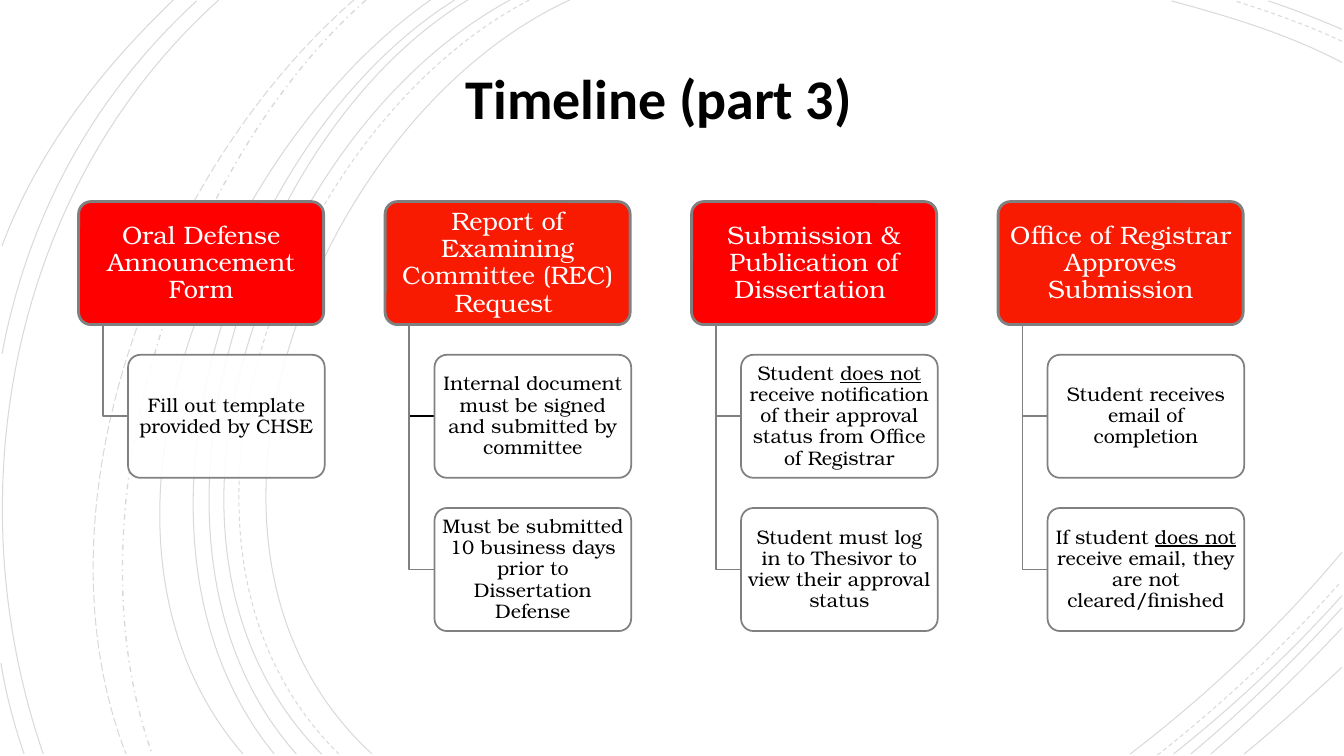
"""Build the third timeline slide: four dissertation steps with their details."""
from dataclasses import dataclass
from typing import NamedTuple

from lxml.etree import SubElement
from pptx import Presentation
from pptx.dml.color import RGBColor
from pptx.dml.line import LineFormat
from pptx.enum.dml import MSO_LINE_DASH_STYLE as Dash
from pptx.enum.shapes import MSO_SHAPE as Preset
from pptx.enum.text import MSO_ANCHOR as Anchor, MSO_AUTO_SIZE as AutoSize, PP_ALIGN as Align
from pptx.oxml.ns import qn
from pptx.shapes.autoshape import Shape
from pptx.slide import Slide
from pptx.util import Pt

PX = 9144
COLORS = {
    "ink": "000000",
    "paper": "FFFFFF",
    "outline": "808080",
    "red": "FF0000",
    "scarlet": "F81B02",
}
BODY_FONT = "TeX Gyre Bonum"
TITLE_FONT = "Calibri"

COLUMN_LEFT, COLUMN_PITCH = 78, 304
HEADER_TOP, HEADER_WIDTH, BOX_HEIGHT = 200, 243, 122
DETAIL_INDENT, DETAIL_WIDTH, ROW_PITCH = 49, 195, 152
STEM_INDENT = 24

Point = tuple[int, int]


class Words(NamedTuple):
    text: str
    underline: bool = False


@dataclass(frozen=True)
class Arc:
    start: Point
    control_1: Point
    control_2: Point
    end: Point
    dash: Dash = Dash.SOLID
    width: float = 0.75


@dataclass(frozen=True)
class Detail:
    words: tuple[Words, ...]
    stem_color: str = "outline"


@dataclass(frozen=True)
class Step:
    heading: str
    fill: str
    details: tuple[Detail, ...]


@dataclass(frozen=True)
class BoxStyle:
    fill: str
    text: str
    size: int
    line_width: float
    margin_x: int
    margin_y: int
    opacity: int = 100


ARCS = (
    Arc((565, 0), (315, 115), (143, 540), (369, 748)),
    Arc((1331, 62), (1278, 34), (1218, 16), (1162, 1)),
    Arc((1121, 748), (1197, 690), (1269, 622), (1331, 548)),
    Arc((525, 0), (285, 125), (123, 537), (336, 748), Dash.DASH),
    Arc((1331, 41), (1297, 25), (1260, 12), (1225, 1), Dash.DASH),
    Arc((1148, 749), (1213, 698), (1275, 640), (1330, 577), Dash.DASH),
    Arc((506, 0), (270, 127), (110, 537), (319, 748)),
    Arc((1331, 29), (1307, 19), (1283, 9), (1258, 1)),
    Arc((1164, 748), (1223, 701), (1280, 648), (1331, 591)),
    Arc((464, 0), (244, 133), (110, 541), (294, 748)),
    Arc((1181, 748), (1234, 704), (1284, 655), (1331, 603)),
    Arc((451, 0), (231, 138), (97, 533), (272, 748)),
    Arc((1201, 748), (1246, 709), (1290, 667), (1331, 623)),
    Arc((427, 0), (217, 147), (53, 529), (241, 748)),
    Arc((1234, 748), (1267, 721), (1299, 692), (1331, 662)),
    Arc((363, 0), (176, 166), (65, 509), (151, 748), Dash.DASH_DOT, 1),
    Arc((351, 0), (157, 169), (29, 499), (125, 748), Dash.LONG_DASH),
    Arc((217, 0), (11, 185), (-46, 490), (43, 748)),
    Arc((195, 1), (92, 96), (28, 214), (2, 351)),
    Arc((1, 658), (6, 689), (14, 719), (24, 748)),
    Arc((172, 0), (100, 69), (37, 150), (2, 244)),
)

STEPS = (
    Step("Oral Defense Announcement Form", "red", (
        Detail((Words("Fill out template provided by CHSE"),)),
    )),
    Step("Report of Examining Committee (REC) Request ", "scarlet", (
        Detail((Words("Internal document must be signed and submitted by committee"),), "ink"),
        Detail((Words("Must be submitted 10 business days prior to Dissertation Defense"),)),
    )),
    Step("Submission & Publication of Dissertation ", "red", (
        Detail((
            Words("Student "),
            Words("does not ", True),
            Words("receive notification of their approval status from Office of Registrar"),
        )),
        Detail((Words("Student must log in to Thesivor to view their approval status"),)),
    )),
    Step("Office of Registrar Approves Submission", "scarlet", (
        Detail((Words("Student receives email of completion"),)),
        Detail((
            Words("If student "),
            Words("does not ", True),
            Words("receive email, they are not cleared/finished"),
        )),
    )),
)

DETAIL_STYLE = BoxStyle("paper", "ink", 14, 1.25, 3, 2, 90)


def rgb(name: str) -> RGBColor:
    return RGBColor.from_string(COLORS[name])


def set_opacity(properties, percent: int) -> None:
    color = properties.find(f"{qn('a:solidFill')}/{qn('a:srgbClr')}")
    SubElement(color, qn("a:alpha"), val=str(percent * 1000))


def set_line(line: LineFormat, color: str, width: float) -> None:
    line.color.rgb = rgb(color)
    line.width = Pt(width)


def add_outline(slide: Slide, points: list[Point], color: str, width: float) -> Shape:
    builder = slide.shapes.build_freeform(*points[0], scale=PX)
    builder.add_line_segments(points[1:], close=False)
    shape = builder.convert_to_shape()
    shape.shadow.inherit = False
    shape.fill.background()
    set_line(shape.line, color, width)
    return shape


def add_arc(slide: Slide, arc: Arc) -> None:
    points = [arc.start, arc.control_1, arc.control_2, arc.end]
    shape = add_outline(slide, points, "ink", arc.width)
    shape.line.dash_style = arc.dash
    set_opacity(shape.line._ln, 15)
    outline = next(shape._element.iter(qn("a:path")))
    curve = SubElement(outline, qn("a:cubicBezTo"))
    for segment in outline.findall(qn("a:lnTo")):
        curve.append(segment[0])
        outline.remove(segment)


def add_box(slide: Slide, left: int, top: int, width: int,
            words: tuple[Words, ...], style: BoxStyle) -> None:
    shape = slide.shapes.add_shape(
        Preset.ROUNDED_RECTANGLE, left * PX, top * PX, width * PX, BOX_HEIGHT * PX)
    shape.adjustments[0] = 0.1
    shape.shadow.inherit = False
    shape.fill.solid()
    shape.fill.fore_color.rgb = rgb(style.fill)
    if style.opacity < 100:
        set_opacity(shape._element.spPr, style.opacity)
    set_line(shape.line, "outline", style.line_width)
    frame = shape.text_frame
    frame.word_wrap = True
    frame.vertical_anchor = Anchor.MIDDLE
    frame.margin_left = frame.margin_right = style.margin_x * PX
    frame.margin_top = frame.margin_bottom = style.margin_y * PX
    paragraph = frame.paragraphs[0]
    paragraph.alignment = Align.CENTER
    paragraph.line_spacing = 0.9
    for part in words:
        run = paragraph.add_run()
        run.text = part.text
        run.font.name = BODY_FONT
        run.font.size = Pt(style.size)
        run.font.color.rgb = rgb(style.text)
        run.font.underline = part.underline


def add_step(slide: Slide, step: Step, left: int) -> None:
    header_style = BoxStyle(step.fill, "paper", 18, 2, 4, 3)
    add_box(slide, left, HEADER_TOP, HEADER_WIDTH, (Words(step.heading),), header_style)
    stem, detail_left = left + STEM_INDENT, left + DETAIL_INDENT
    for row, detail in enumerate(step.details, start=1):
        top = HEADER_TOP + row * ROW_PITCH
        middle = top + BOX_HEIGHT // 2
        elbow = [(stem, HEADER_TOP + BOX_HEIGHT), (stem, middle), (detail_left, middle)]
        add_outline(slide, elbow, detail.stem_color, 1.25)
        add_box(slide, detail_left, top, DETAIL_WIDTH, detail.words, DETAIL_STYLE)


def set_title(slide: Slide, text: str) -> None:
    title = slide.shapes.title
    title.left, title.top, title.width, title.height = (
        length * PX for length in (320, 58, 667, 77))
    frame = title.text_frame
    frame.auto_size = AutoSize.SHAPE_TO_FIT_TEXT
    frame.vertical_anchor = Anchor.TOP
    paragraph = frame.paragraphs[0]
    paragraph.alignment = Align.CENTER
    run = paragraph.add_run()
    run.text = text
    run.font.name = TITLE_FONT
    run.font.size = Pt(40)
    run.font.bold = True
    run.font.color.rgb = rgb("ink")


def main() -> None:
    presentation = Presentation()
    presentation.slide_width, presentation.slide_height = 1333 * PX, 750 * PX
    slide = presentation.slides.add_slide(presentation.slide_layouts[5])
    set_title(slide, "Timeline (part 3)")
    for arc in ARCS:
        add_arc(slide, arc)
    for column, step in enumerate(STEPS):
        add_step(slide, step, COLUMN_LEFT + column * COLUMN_PITCH)
    presentation.save("out.pptx")


if __name__ == "__main__":
    main()
